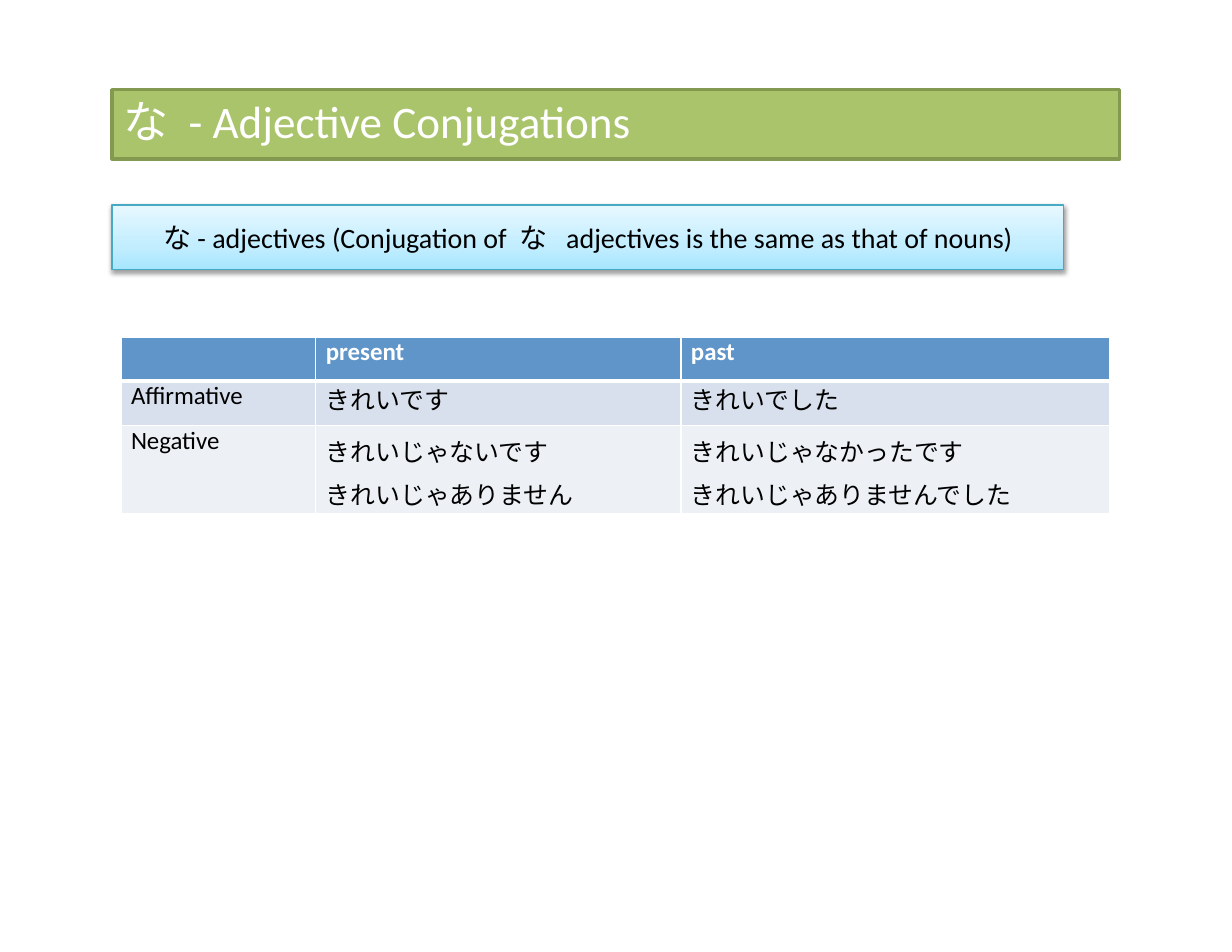
from lxml import etree
from pptx import Presentation, util as u
from pptx.dml.color import RGBColor
from pptx.enum import shapes, text
from pptx.oxml import parse_xml
from pptx.oxml.ns import qn

NS = 'xmlns:a="http://schemas.openxmlformats.org/drawingml/2006/main"'
LATIN, JAPANESE = "Calibri", "Noto Sans CJK JP"


def color(code):
    return RGBColor.from_string(code)


def add_span(para, words, tracking=0, **formats):
    """Add one run; tracking is extra letter spacing in points."""
    span = para.add_run()
    span.text = words
    for name, value in formats.items():
        if name == "color":
            span.font.color.rgb = color(value)
        else:
            setattr(span.font, name, value)
    props = span.font._element
    if tracking:
        props.set("spc", str(int(tracking * 100)))
    etree.SubElement(props, qn("a:ea")).set("typeface", JAPANESE)


deck = Presentation()
deck.slide_width, deck.slide_height = u.Inches(11), u.Inches(8.5)
page = deck.slides.add_slide(deck.slide_layouts[5])
margin = deck.slide_width // 11

# Title bar
bar = page.shapes.add_shape(shapes.MSO_SHAPE.RECTANGLE, margin, u.Inches(0.8),
                            margin * 9, u.Inches(0.62))
bar.shadow.inherit = False
bar.fill.solid()
bar.fill.fore_color.rgb = color("AAC46C")
bar.line.color.rgb = color("839950")
bar.line.width = u.Pt(2)

# Title, brought in front of its bar
title = page.shapes.title
bar._element.addnext(title._element)
place = {"left": 1.09, "top": 0.83, "width": 8.83, "height": 0.51}
for name, value in place.items():
    setattr(title, name, u.Inches(value))
frame = title.text_frame
frame_format = {"margin_left": u.Inches(0.01), "margin_right": 0, "margin_top": 0,
                "margin_bottom": 0, "word_wrap": True,
                "auto_size": text.MSO_AUTO_SIZE.NONE,
                "vertical_anchor": text.MSO_ANCHOR.TOP}
for name, value in frame_format.items():
    setattr(frame, name, value)
para = frame.paragraphs[0]
para.alignment = text.PP_ALIGN.LEFT
for words, tracking in [("な", 6.5), (" - Adjective Conjugations", 0)]:
    add_span(para, words, tracking, name=LATIN, size=u.Pt(29), color="FFFFFF")

# Conjugation table
header = ["", "present", "past"]
body = [["Aﬃrmative", "きれいです", "きれいでした"],
        ["Negative", "きれいじゃないです\nきれいじゃありません",
         "きれいじゃなかったです\nきれいじゃありませんでした"]]
widths, heights = [1.74, 3.26, 3.83], [0.39, 0.4, 0.79]
fills = ["6095C9", "D9E0ED", "EDF1F6"]
table = page.shapes.add_table(3, 3, u.Inches(1.08), u.Inches(3.01),
                              u.Inches(sum(widths)), u.Inches(sum(heights))).table
for column, width in zip(table.columns, widths):
    column.width = u.Inches(width)
for r, words_row in enumerate([header] + body):
    table.rows[r].height = u.Inches(heights[r])
    for c, words in enumerate(words_row):
        cell = table.cell(r, c)
        cell.margin_left = u.Inches(0.09)
        cell.margin_right = cell.margin_top = cell.margin_bottom = 0
        # White rules, heavier under the header
        rules = {"lnL": 1, "lnR": 1, "lnT": 3 if r == 1 else 1, "lnB": 3 if r == 0 else 1}
        for tag, points in rules.items():
            cell._tc.get_or_add_tcPr().append(parse_xml(
                f'<a:{tag} {NS} w="{u.Pt(points)}"><a:solidFill>'
                f'<a:srgbClr val="FFFFFF"/></a:solidFill></a:{tag}>'))
        cell.fill.solid()
        cell.fill.fore_color.rgb = color(fills[r])
        lines = words.split("\n") if words else []
        for n, line in enumerate(lines):
            para = cell.text_frame.paragraphs[0] if n == 0 else cell.text_frame.add_paragraph()
            if len(lines) > 1:
                para.line_spacing = 1.2
            add_span(para, line, name=JAPANESE if r and c else LATIN, size=u.Pt(16),
                     bold=r == 0, color="000000" if r else "FFFFFF")

# Note with gradient and soft shadow
note = page.shapes.add_shape(shapes.MSO_SHAPE.RECTANGLE, margin, u.Inches(1.83),
                             int(margin * 8.5), u.Inches(0.58))
note.line.color.rgb = color("46AAC5")
note.line.width = u.Pt(0.75)
stops = "".join(f'<a:gs pos="{share * 1000}"><a:srgbClr val="{code}"/></a:gs>'
                for share, code in [(0, "A7E6FF"), (35, "C1EDFF"), (100, "E7F8FF")])
outline = note.line._get_or_add_ln()
outline.addprevious(parse_xml(
    f'<a:gradFill {NS} rotWithShape="1"><a:gsLst>{stops}</a:gsLst>'
    '<a:lin ang="16200000" scaled="0"/></a:gradFill>'))
outline.addnext(parse_xml(
    f'<a:effectLst {NS}><a:outerShdw blurRad="{u.Pt(3.1)}" dist="{u.Pt(1.6)}" '
    'dir="5400000" rotWithShape="0"><a:srgbClr val="000000"><a:alpha val="38000"/>'
    '</a:srgbClr></a:outerShdw></a:effectLst>'))
note.text_frame.word_wrap = True
note.text_frame.vertical_anchor = text.MSO_ANCHOR.MIDDLE
para = note.text_frame.paragraphs[0]
para.alignment = text.PP_ALIGN.CENTER
for words, tracking in [("な", 4), ("- adjectives (Conjugation of", 0), (" な ", 4),
                        ("adjectives is the same as that of nouns)", 0)]:
    add_span(para, words, tracking, name=LATIN, size=u.Pt(18), color="000000")

deck.save("out.pptx")
